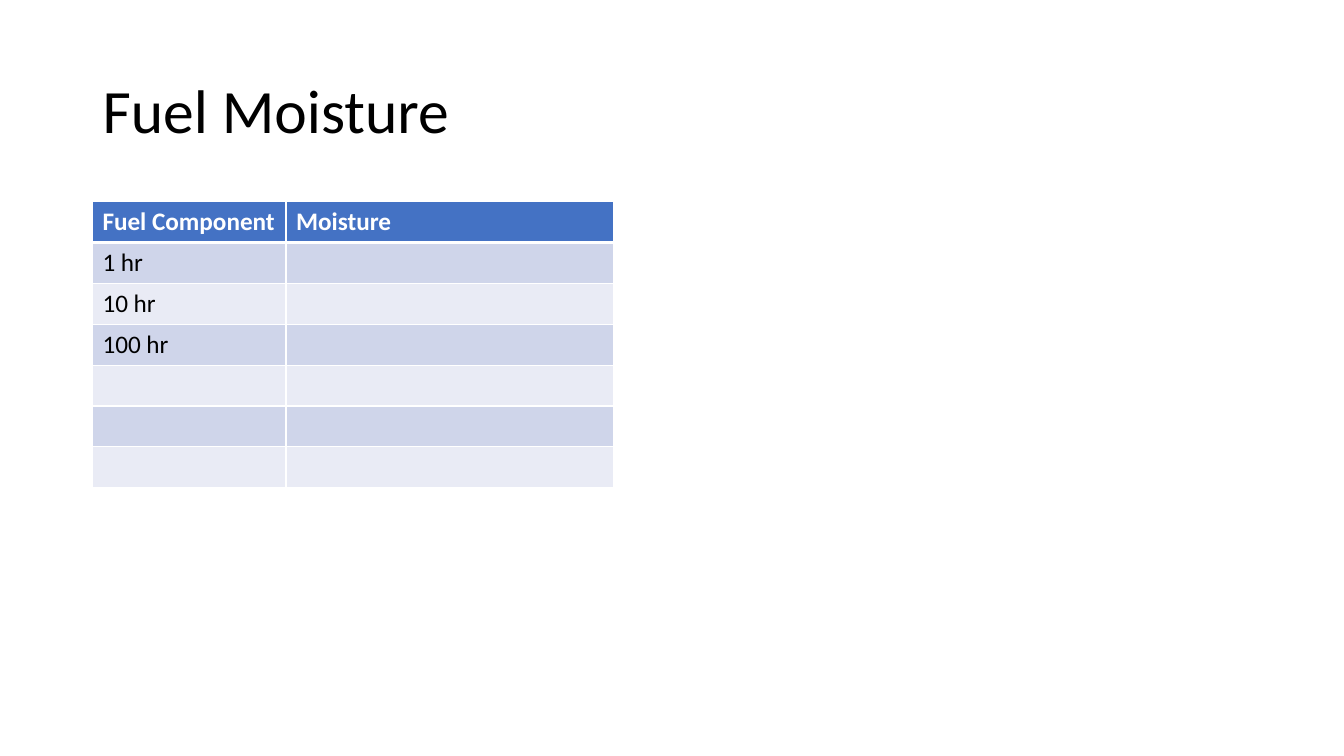
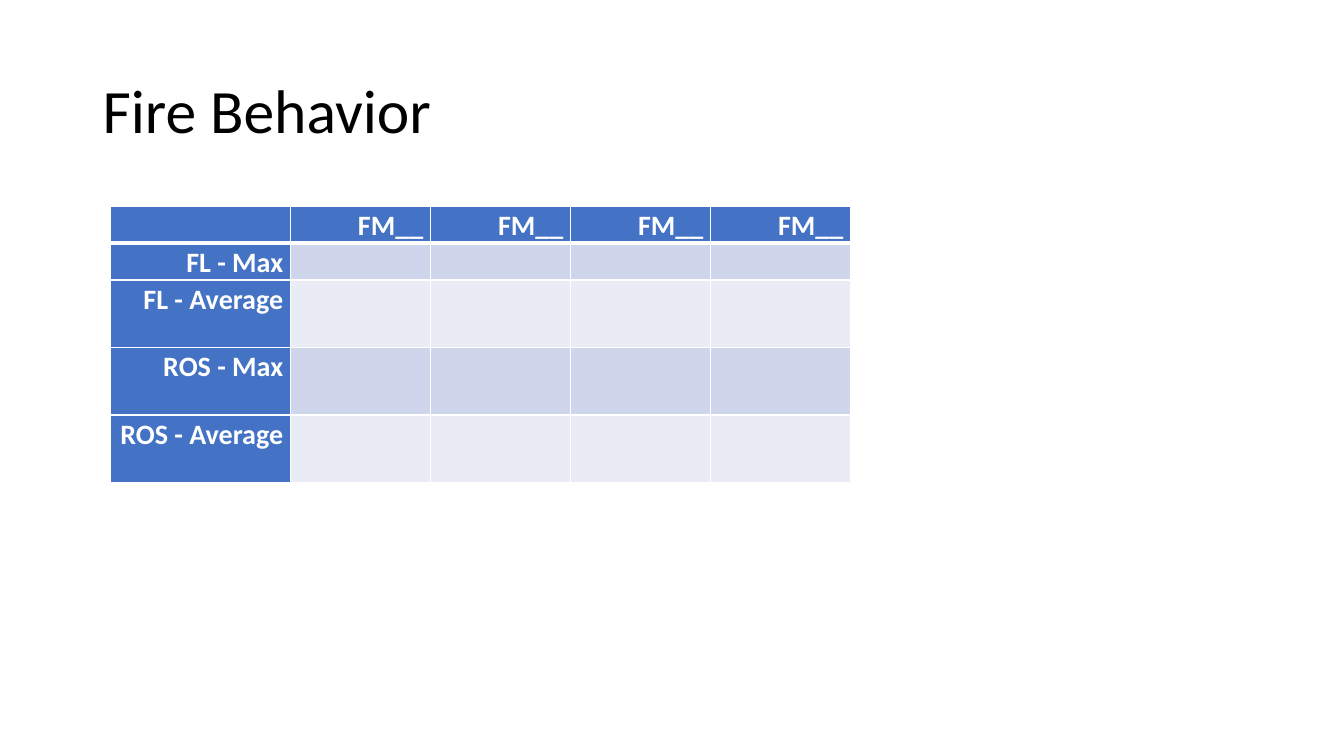
from lxml import etree
from pptx import Presentation
from pptx.dml.color import RGBColor
from pptx.enum.text import MSO_ANCHOR, PP_ALIGN
from pptx.oxml.ns import qn
from pptx.util import Inches, Pt

LEFT, RIGHT, MIDDLE = PP_ALIGN.LEFT, PP_ALIGN.RIGHT, MSO_ANCHOR.MIDDLE
SLIDE_W, SLIDE_H = Inches(13.33), Inches(7.5)
TITLE_ONLY = 5
FONT = "Calibri"
BLACK, WHITE, BLUE = "000000", "FFFFFF", "4472C4"
BANDS = ("CFD5EA", "E9EBF5")
MARGIN = 6.88
THIN, THICK = 1, 3


def rgb(value):
    return RGBColor.from_string(value)


def across(percent):
    return round(SLIDE_W * percent / 100)


def down(percent):
    return round(SLIDE_H * percent / 100)


def format_text(tf, size, color, bold=False, align=LEFT, spacing=None):
    for p in tf.paragraphs:
        p.alignment = align
        p.line_spacing = spacing
        for r in p.runs:
            r.font.name = FONT
            r.font.size = Pt(size)
            r.font.bold = bold
            r.font.color.rgb = rgb(color)


def add_titled_slide(prs, text):
    slide = prs.slides.add_slide(prs.slide_layouts[TITLE_ONLY])
    title = slide.shapes.title
    title.left, title.top = across(MARGIN), down(5.32)
    title.width, title.height = across(86.25), down(19.33)
    tf = title.text_frame
    tf.text = text
    tf.vertical_anchor = MIDDLE
    format_text(tf, 44, BLACK, spacing=0.9)
    return slide


def set_borders(cell, top, bottom):
    tc_pr = cell._tc.get_or_add_tcPr()
    for side, width in (("L", THIN), ("R", THIN), ("T", top), ("B", bottom)):
        line = etree.SubElement(tc_pr, qn(f"a:ln{side}"), w=str(Pt(width)))
        fill = etree.SubElement(line, qn("a:solidFill"))
        etree.SubElement(fill, qn("a:srgbClr"), val=WHITE)


def add_banded_table(slide, left, top, columns, rows, texts, size,
                     header_column=False, align=LEFT, spacing=None, insets=None):
    frame = slide.shapes.add_table(
        len(rows), len(columns), across(left), down(top),
        across(sum(columns)), down(sum(rows)))
    table = frame.table
    table.first_row = table.horz_banding = False
    for column, width in zip(table.columns, columns):
        column.width = across(width)
    for row, height in zip(table.rows, rows):
        row.height = down(height)
    for i in range(len(rows)):
        for j in range(len(columns)):
            cell = table.cell(i, j)
            is_header = i == 0 or (header_column and j == 0)
            set_borders(cell, THICK if i == 1 else THIN,
                        THICK if i == 0 else THIN)
            cell.fill.solid()
            cell.fill.fore_color.rgb = rgb(BLUE if is_header else BANDS[(i - 1) % 2])
            if insets:
                cell.margin_left = cell.margin_right = Inches(insets[0])
                cell.margin_top = cell.margin_bottom = Inches(insets[1])
            if (i, j) in texts:
                cell.text_frame.text = texts[i, j]
                format_text(cell.text_frame, size, WHITE if is_header else BLACK,
                            is_header, align, spacing)


def header_texts(top_row, first_column):
    texts = {(0, j): text for j, text in enumerate(top_row) if text}
    texts.update({(i, 0): text for i, text in enumerate(first_column, 1)})
    return texts


def main():
    prs = Presentation()
    prs.slide_width, prs.slide_height = SLIDE_W, SLIDE_H

    moisture = add_titled_slide(prs, "Fuel Moisture")
    add_banded_table(
        moisture, MARGIN, 26.67, [14.4, 24.38], [5.41] * 7,
        header_texts(["Fuel Component", "Moisture"], ["1 hr", "10 hr", "100 hr"]),
        size=18)

    behavior = add_titled_slide(prs, "Fire Behavior")
    add_banded_table(
        behavior, 8.25, 27.33, [13.35] + [10.42] * 4, [4.4] * 2 + [8.93] * 3,
        header_texts([""] + ["FM__"] * 4,
                     ["FL - Max", "FL - Average", "ROS - Max", "ROS - Average"]),
        size=20, header_column=True, align=RIGHT, spacing=1.07, insets=(0.07, 0))

    prs.save("out.pptx")


if __name__ == "__main__":
    main()
